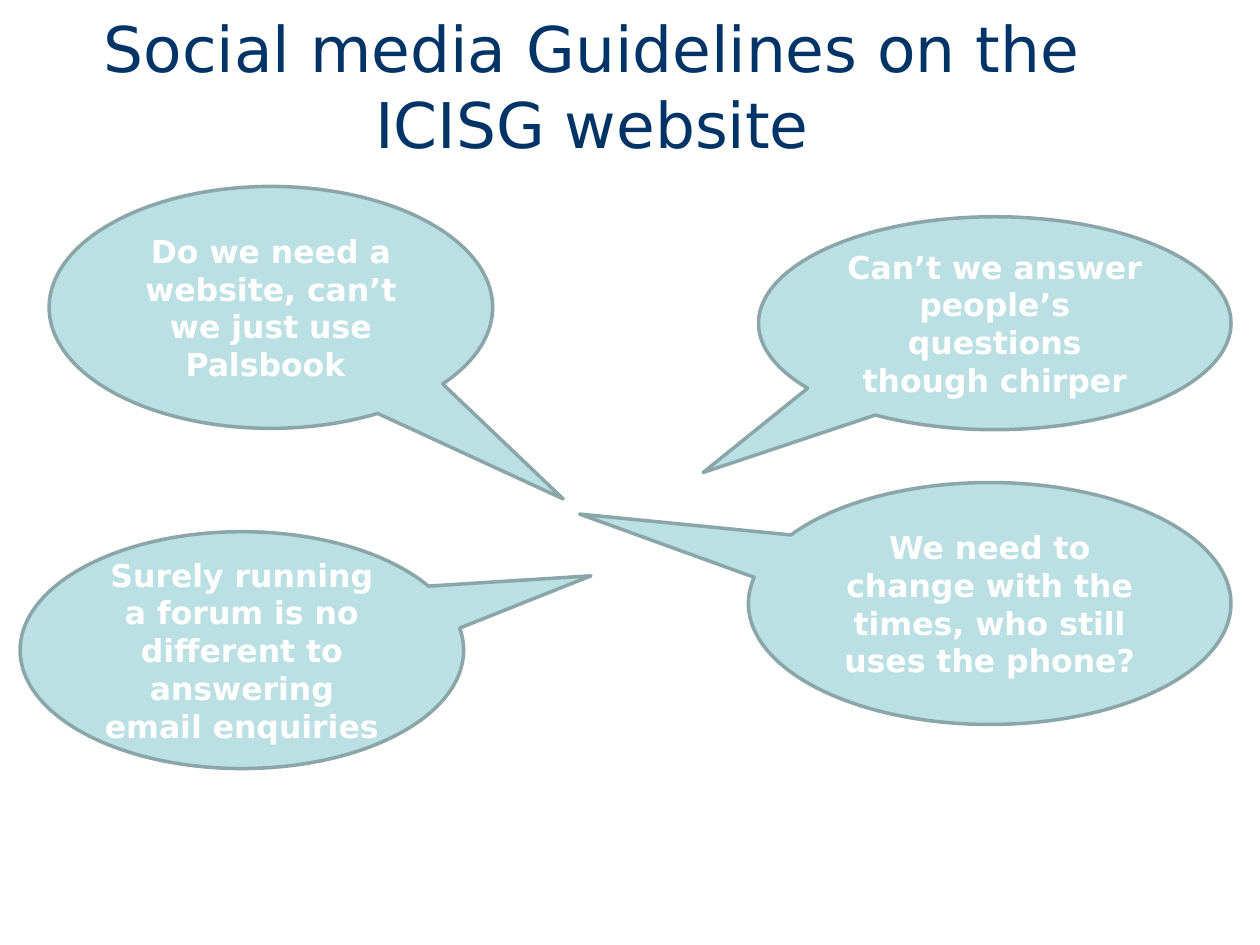
import pptx
import pptx.util
from pptx.dml.color import RGBColor
from pptx.enum.shapes import MSO_SHAPE
from pptx.enum.text import MSO_ANCHOR, MSO_AUTO_SIZE, PP_ALIGN
from pptx.util import Inches

THEME = {
    "font": "DejaVu Sans",
    "title_size": 36,
    "bubble_size": 18,
    "outline_width": 2,
    "title": "003366",
    "bubble": "BBE0E3",
    "outline": "8AA6A8",
    "bubble_text": "FFFFFF",
}

TITLE = "Social media Guidelines on the ICISG website"
TITLE_BOX = (0.2, 0.05, 9, 1.25)

# Words, box (left, top, width, height), tip of the tail (x, y)
BUBBLES = [
    ("Can’t we answer people’s questions though chirper",
     (6.02, 1.72, 3.75, 1.69), (5.58, 3.75)),
    ("Do we need a website, can’t we just use Palsbook ",
     (0.39, 1.48, 3.52, 1.92), (4.47, 3.96)),
    ("We need to change with the times, who still uses the phone?",
     (5.94, 3.83, 3.83, 1.92), (4.6, 4.08)),
    ("Surely running a forum is no different to answering email enquiries",
     (0.16, 4.22, 3.52, 1.88), (4.69, 4.57)),
]


def color(part):
    return RGBColor.from_string(THEME[part])


def write(frame, text, *, size, part, bold=False):
    frame.word_wrap = True
    frame.auto_size = MSO_AUTO_SIZE.NONE
    frame.vertical_anchor = MSO_ANCHOR.MIDDLE
    paragraph = frame.paragraphs[0]
    paragraph.alignment = PP_ALIGN.CENTER
    run = paragraph.add_run()
    run.text = text
    run.font.name = THEME["font"]
    run.font.size = pptx.util.Pt(THEME[size])
    run.font.bold = bold
    run.font.color.rgb = color(part)


def add_bubble(slide, words, box, tip):
    left, top, width, height = box
    bubble = slide.shapes.add_shape(
        MSO_SHAPE.OVAL_CALLOUT, *map(Inches, box))
    # The tail is measured from the centre, as a share of the bubble's size
    bubble.adjustments[0] = (tip[0] - left) / width - 0.5
    bubble.adjustments[1] = (tip[1] - top) / height - 0.5
    bubble.shadow.inherit = False
    bubble.fill.solid()
    bubble.fill.fore_color.rgb = color("bubble")
    bubble.line.color.rgb = color("outline")
    bubble.line.width = pptx.util.Pt(THEME["outline_width"])
    write(bubble.text_frame, words, size="bubble_size",
          part="bubble_text", bold=True)


def main():
    deck = pptx.Presentation()
    deck.slide_width, deck.slide_height = Inches(10), Inches(7.5)
    slide = deck.slides.add_slide(deck.slide_layouts.get_by_name("Title Only"))

    heading = slide.shapes.title
    heading.left, heading.top, heading.width, heading.height = map(
        Inches, TITLE_BOX)
    write(heading.text_frame, TITLE, size="title_size", part="title")

    for words, box, tip in BUBBLES:
        add_bubble(slide, words, box, tip)

    deck.save("out.pptx")


if __name__ == "__main__":
    main()
